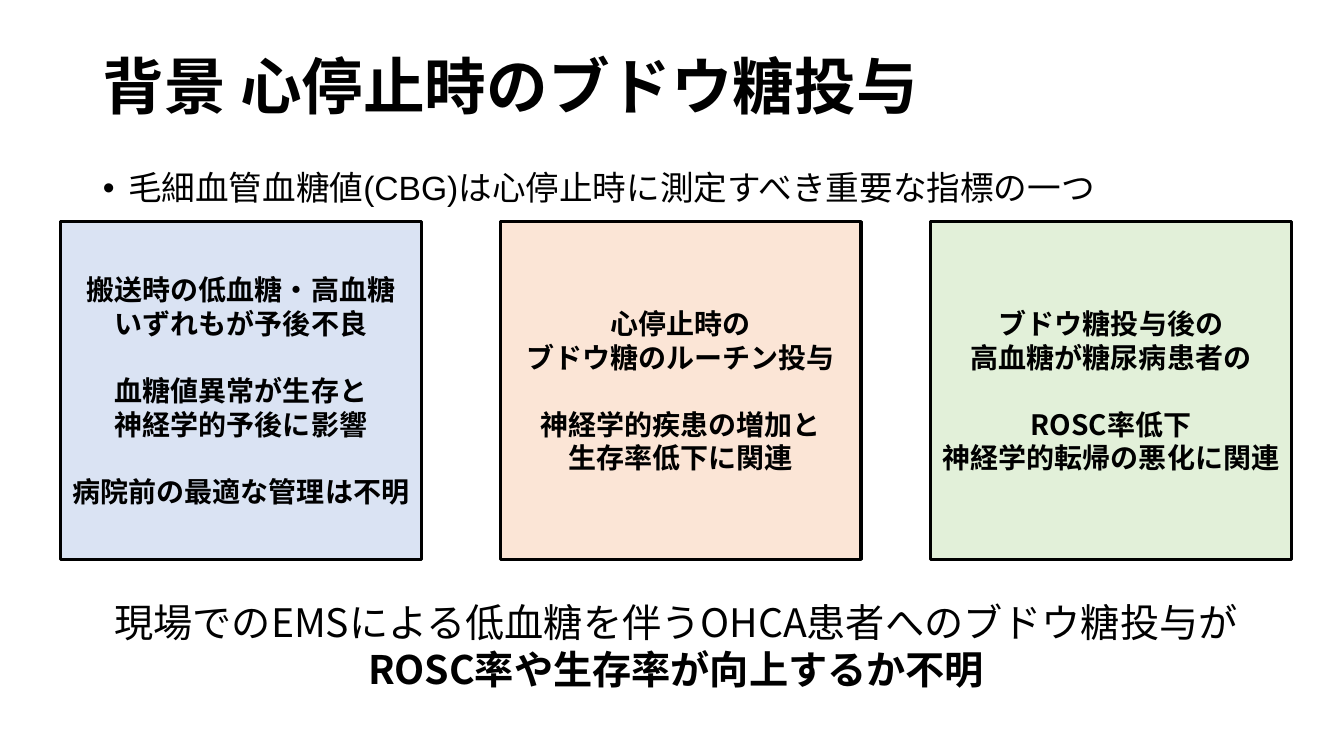
from lxml.etree import SubElement
from pptx import Presentation
from pptx.dml.color import RGBColor
from pptx.enum.shapes import MSO_SHAPE
from pptx.enum.text import MSO_ANCHOR as Anchor, MSO_AUTO_SIZE as AutoSize, PP_ALIGN as Align
from pptx.oxml.ns import qn
from pptx.util import Inches, Pt

WIDTH, HEIGHT = Inches(13.33), Inches(7.5)
LATIN_FONT, JAPANESE_FONT = "Arial", "Noto Sans CJK JP"
BLACK = RGBColor(0x00, 0x00, 0x00)
BLUE = RGBColor(0xDA, 0xE3, 0xF3)
ORANGE = RGBColor(0xFB, 0xE5, 0xD6)
GREEN = RGBColor(0xE2, 0xF0, 0xD9)

# Shares of the slide's size, in percent
TEXT_LEFT, TEXT_WIDTH = 6.9, 86.27
CARD_TOP, CARD_WIDTH, CARD_HEIGHT = 29.33, 26.86, 44.67
OUTER_LEFT, OUTER_WIDTH = 4.5, 91.6
CARD_LINE = Pt(24)

# Left edge, fill, and groups of lines
CARDS = [
    (OUTER_LEFT, BLUE, [
        ["搬送時の低血糖・高血糖", "いずれもが予後不良"],
        ["血糖値異常が生存と", "神経学的予後に影響"],
        ["病院前の最適な管理は不明"],
    ]),
    (37.21, ORANGE, [
        ["心停止時の", "ブドウ糖のルーチン投与"],
        ["神経学的疾患の増加と", "生存率低下に関連"],
    ]),
    (69.24, GREEN, [
        ["ブドウ糖投与後の", "高血糖が糖尿病患者の"],
        ["ROSC率低下", "神経学的転帰の悪化に関連"],
    ]),
]


def frame(left, top, width, height):
    """Turn percentages of the slide into left, top, width and height."""
    return (int(WIDTH * left / 100), int(HEIGHT * top / 100),
            int(WIDTH * width / 100), int(HEIGHT * height / 100))


def add_span(para, text, size, font=JAPANESE_FONT, bold=False):
    span = para.add_run()
    span.text = text
    span.font.size = Pt(size)
    span.font.bold = bold
    span.font.color.rgb = BLACK
    span.font.name = font
    east_asian = SubElement(span.font._element, qn("a:ea"))
    east_asian.set("typeface", JAPANESE_FONT)


def fill_placeholder(box, area, text, size, anchor, bold=False):
    box.left, box.top, box.width, box.height = frame(*area)
    box.text_frame.auto_size = AutoSize.NONE
    box.text_frame.vertical_anchor = anchor
    para = box.text_frame.paragraphs[0]
    para.alignment = Align.LEFT
    para.space_before = Pt(0)
    add_span(para, text, size, LATIN_FONT, bold)
    return para


def set_bullet(para, indent):
    properties = para._p.get_or_add_pPr()
    properties.set("marL", str(indent))
    properties.set("indent", str(-indent))
    SubElement(properties, qn("a:buFont")).set("typeface", LATIN_FONT)
    SubElement(properties, qn("a:buChar")).set("char", "•")


def add_card(page, left, fill, groups):
    card = page.shapes.add_shape(
        MSO_SHAPE.RECTANGLE, *frame(left, CARD_TOP, CARD_WIDTH, CARD_HEIGHT))
    card.shadow.inherit = False
    card.fill.solid()
    card.fill.fore_color.rgb = fill
    card.line.color.rgb = BLACK
    card.line.width = Pt(2.25)
    body = card.text_frame
    body.word_wrap = True
    body.vertical_anchor = Anchor.MIDDLE
    for number, lines in enumerate(groups):
        para = body.add_paragraph() if number else body.paragraphs[0]
        para.alignment = Align.CENTER
        para.space_before = CARD_LINE if number else Pt(0)
        for row, line in enumerate(lines):
            if row:
                para.add_line_break()
            add_span(para, line, 20, bold=True)


def add_conclusion(page):
    box = page.shapes.add_textbox(*frame(OUTER_LEFT, 78.53, OUTER_WIDTH, 13.87))
    box.text_frame.word_wrap = True
    para = box.text_frame.paragraphs[0]
    para.alignment = Align.CENTER
    add_span(para, "現場でのEMSによる低血糖を伴うOHCA患者へのブドウ糖投与が", 28)
    para.add_line_break()
    add_span(para, "ROSC率や生存率が向上するか不明", 28, bold=True)


def main():
    deck = Presentation()
    deck.slide_width, deck.slide_height = WIDTH, HEIGHT
    page = deck.slides.add_slide(deck.slide_layouts[1])
    title, body = page.placeholders

    heading = fill_placeholder(title, (TEXT_LEFT, 2.13, TEXT_WIDTH, 19.33),
                               "背景 心停止時のブドウ糖投与", 44, Anchor.MIDDLE, bold=True)
    heading.line_spacing = 0.9
    point = fill_placeholder(body, (TEXT_LEFT, 21.47, TEXT_WIDTH, 28.53),
                             "毛細血管血糖値(CBG)は心停止時に測定すべき重要な指標の一つ",
                             24, Anchor.TOP)
    set_bullet(point, Inches(0.25))

    for left, fill, groups in CARDS:
        add_card(page, left, fill, groups)
    add_conclusion(page)
    deck.save("out.pptx")


if __name__ == "__main__":
    main()
